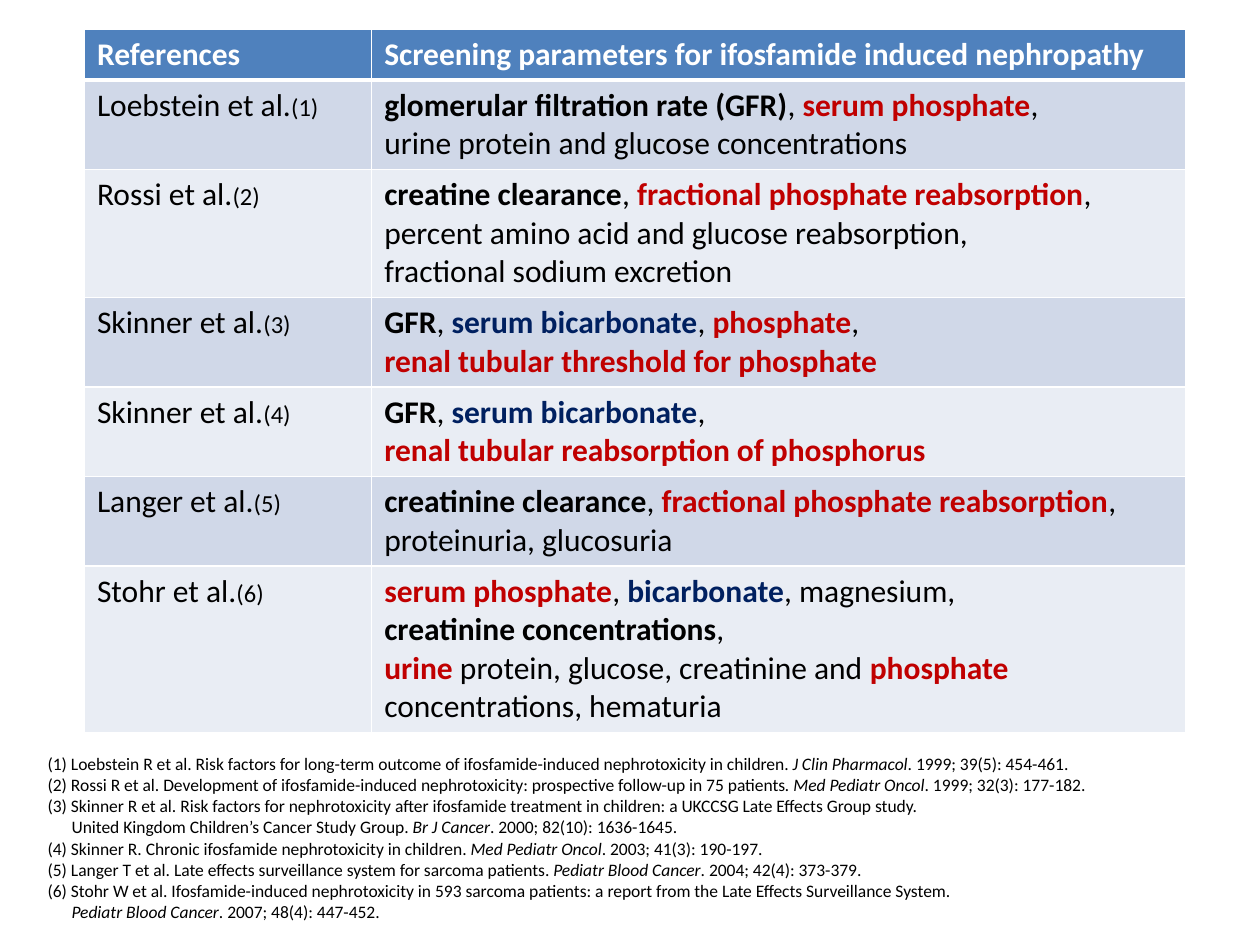
from lxml import etree
from pptx import Presentation
from pptx.dml.color import RGBColor
from pptx.enum.text import MSO_AUTO_SIZE
from pptx.oxml.ns import qn
from pptx.util import Inches, Pt

GROW = MSO_AUTO_SIZE.SHAPE_TO_FIT_TEXT
FONT = "Calibri"
WHITE, BLACK, RED, NAVY = "FFFFFF", "000000", "C00000", "002060"
HEADER_FILL, BAND_FILLS = "4F81BD", ("D0D8E8", "E9EDF4")

# Run styles: colour, bold
PLAIN, BOLD = (BLACK, False), (BLACK, True)
PHOSPHATE, BICARBONATE, HEADING = (RED, True), (NAVY, True), (WHITE, True)
COMMA, END = (", ", PLAIN), (",", PLAIN)

# Content: study, number of text lines, paragraphs of (text, style)
HEADERS = ("References", "Screening parameters for ifosfamide induced nephropathy")
STUDIES = [
    ("Loebstein", 2, [
        [("glomerular filtration rate (GFR)", BOLD), COMMA, ("serum phosphate", PHOSPHATE), END],
        [("urine protein and glucose concentrations", PLAIN)]]),
    ("Rossi", 3, [
        [("creatine clearance", BOLD), COMMA,
         ("fractional phosphate reabsorption", PHOSPHATE), END],
        [("percent amino acid and glucose reabsorption,", PLAIN)],
        [("fractional sodium excretion", PLAIN)]]),
    ("Skinner", 2, [
        [("GFR", BOLD), COMMA, ("serum bicarbonate", BICARBONATE), COMMA,
         ("phosphate", PHOSPHATE), END],
        [("renal tubular threshold for phosphate", PHOSPHATE)]]),
    ("Skinner", 2, [
        [("GFR", BOLD), COMMA, ("serum bicarbonate", BICARBONATE), END],
        [("renal tubular reabsorption of phosphorus", PHOSPHATE)]]),
    ("Langer", 2, [
        [("creatinine clearance", BOLD), COMMA,
         ("fractional phosphate reabsorption", PHOSPHATE), END],
        [("proteinuria, glucosuria", PLAIN)]]),
    ("Stohr", 4, [
        [("serum phosphate", PHOSPHATE), COMMA, ("bicarbonate", BICARBONATE),
         (", magnesium,", PLAIN)],
        [("creatinine concentrations", BOLD), END],
        [("urine", PHOSPHATE), (" protein, glucose, creatinine and ", PLAIN),
         ("phosphate ", PHOSPHATE), ("concentrations, hematuria", PLAIN)]]),
]

# Citations: text, journal (italic), issue; an unnumbered line continues the one above
CITATIONS = [
    ("(1) Loebstein R et al. Risk factors for long-term outcome of ifosfamide-induced "
     "nephrotoxicity in children. ", "J Clin Pharmacol", ". 1999; 39(5): 454-461."),
    ("(2) Rossi R et al. Development of ifosfamide-induced nephrotoxicity: prospective "
     "follow-up in 75 patients", ". Med Pediatr Oncol", ". 1999; 32(3): 177-182."),
    ("(3) Skinner R et al. Risk factors for nephrotoxicity after ifosfamide treatment in "
     "children: a UKCCSG Late Effects Group study.", "", ""),
    ("United Kingdom Children’s Cancer Study Group. ", "Br J Cancer",
     ". 2000; 82(10): 1636-1645."),
    ("(4) Skinner R. Chronic ifosfamide nephrotoxicity in children. ",
     "Med Pediatr Oncol", ". 2003; 41(3): 190-197."),
    ("(5) Langer T et al. Late effects surveillance system for sarcoma patients. ",
     "Pediatr Blood Cancer", ". 2004; 42(4): 373-379."),
    ("(6) Stohr W et al. Ifosfamide-induced nephrotoxicity in 593 sarcoma patients: a report "
     "from the Late Effects Surveillance System.", "", ""),
    ("", "Pediatr Blood Cancer", ". 2007; 48(4): 447-452."),
]

COLUMN_WIDTHS = (2.28, 6.46)
CELL_PADDING, LINE_HEIGHT = 0.1, 0.3
CITATION_INDENT = 0.19


def color(value):
    return RGBColor.from_string(value)


def add_span(para, text, style=PLAIN, size=18, italic=False):
    span = para.add_run()
    span.text = text
    span.font.name, span.font.size = FONT, Pt(size)
    span.font.color.rgb = color(style[0])
    span.font.bold, span.font.italic = style[1], italic


def paragraph_at(frame, index):
    return frame.paragraphs[0] if index == 0 else frame.add_paragraph()


def fill_cell(cell, paragraphs, fill, top=1, bottom=1):
    """Write (text, style[, size]) runs, then draw white borders and the fill."""
    for index, spans in enumerate(paragraphs):
        para = paragraph_at(cell.text_frame, index)
        for span in spans:
            add_span(para, *span)
    properties = cell._tc.get_or_add_tcPr()
    for side, width in (("L", 1), ("R", 1), ("T", top), ("B", bottom)):
        line = etree.SubElement(properties, qn(f"a:ln{side}"), w=str(Pt(width)))
        paint = etree.SubElement(line, qn("a:solidFill"))
        etree.SubElement(paint, qn("a:srgbClr"), val=WHITE)
    cell.fill.solid()
    cell.fill.fore_color.rgb = color(fill)


def add_studies_table(page):
    heights = [CELL_PADDING + LINE_HEIGHT * lines
               for lines in [1] + [study[1] for study in STUDIES]]
    table = page.shapes.add_table(
        len(heights), len(COLUMN_WIDTHS), Inches(0.67), Inches(0.23),
        Inches(sum(COLUMN_WIDTHS)), Inches(sum(heights))).table
    for column, width in zip(table.columns, COLUMN_WIDTHS):
        column.width = Inches(width)
    for row, height in zip(table.rows, heights):
        row.height = Inches(height)

    for column, heading in enumerate(HEADERS):
        fill_cell(table.cell(0, column), [[(heading, HEADING)]], HEADER_FILL, bottom=3)
    for number, (author, _, parameters) in enumerate(STUDIES, 1):
        fill = BAND_FILLS[(number - 1) % 2]
        top = 3 if number == 1 else 1
        reference = [(f"{author} et al.", PLAIN), (f"({number})", PLAIN, 14)]
        fill_cell(table.cell(number, 0), [reference], fill, top)
        fill_cell(table.cell(number, 1), parameters, fill, top)


def add_citations(page):
    box = page.shapes.add_textbox(Inches(0.28), Inches(5.93), Inches(9.53), Inches(1.45))
    frame = box.text_frame
    frame.word_wrap, frame.auto_size = True, GROW
    for index, (text, journal, issue) in enumerate(CITATIONS):
        para = paragraph_at(frame, index)
        first_line = -CITATION_INDENT if text.startswith("(") else 0
        properties = para._p.get_or_add_pPr()
        properties.set("marL", str(Inches(CITATION_INDENT)))
        properties.set("indent", str(Inches(first_line)))
        for part, italic in ((text, False), (journal, True), (issue, False)):
            if part:
                add_span(para, part, size=10, italic=italic)


def main():
    deck = Presentation()
    deck.slide_width, deck.slide_height = Inches(10), Inches(7.5)
    page = deck.slides.add_slide(deck.slide_layouts[6])
    add_studies_table(page)
    add_citations(page)
    deck.save("out.pptx")


if __name__ == "__main__":
    main()
